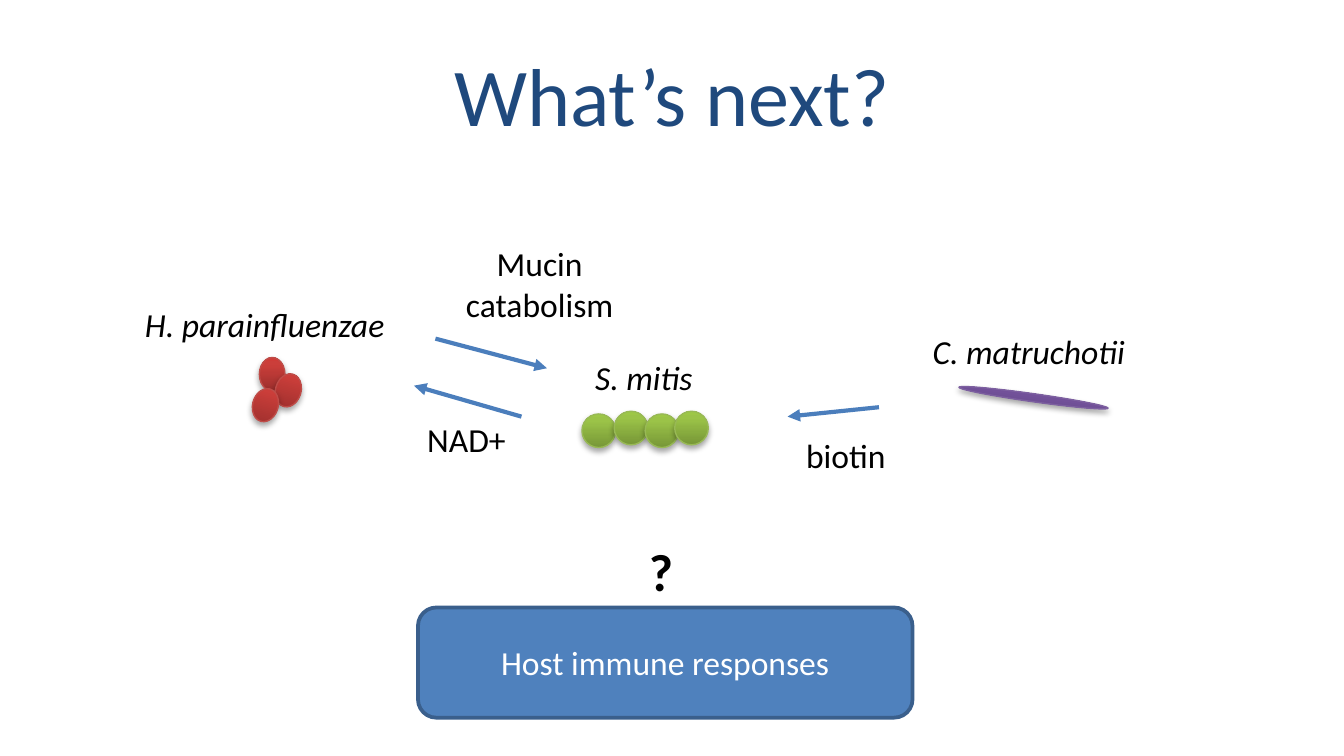
import copy

import pptx
import pptx.dml.color
import pptx.enum.shapes
import pptx.enum.text
import pptx.oxml
import pptx.oxml.ns
import pptx.util

Inches, Pt = pptx.util.Inches, pptx.util.Pt
SHAPE = pptx.enum.shapes.MSO_SHAPE
ALIGN = pptx.enum.text.PP_ALIGN
qn = pptx.oxml.ns.qn

SLIDE_SIZE = (10, 10 * 9 / 16)

# Gradient from bottom to top, then outline
GREEN = (("779737", "9BC348", "9DC746"), "98B955")
PURPLE = (("5F4480", "7B58A6", "7C57A8"), "7D60A0")
RED = (("9C2F2D", "CB3E3A", "CE3B37"), "BF4C48")
GRADIENT_POSITIONS = (0, 0.8, 1)

MITIS_CELLS = [((left, top, 0.25, 0.25), 0)
               for left, top in zip((4.33, 4.57, 4.8, 5.02), (3.08, 3.06) * 2)]
MATRUCHOTII_CELLS = [((7.13, 2.93, 1.12, 0.06), 8)]
PARAINFLUENZAE_CELLS = [
    ((1.93, 2.66, 0.19, 0.25), 0),
    ((2.05, 2.78, 0.19, 0.25), 15.8),
    ((1.88, 2.89, 0.19, 0.25), 15.8),
]

# Name, label box, alignment, cells, colours, whether label and cells are grouped
SPECIES = [
    ("S. mitis", (4.33, 2.61, 0.93, 0.4), ALIGN.LEFT, MITIS_CELLS, GREEN, True),
    ("C. matruchotii", (6.83, 2.41, 1.65, 0.4), ALIGN.CENTER,
     MATRUCHOTII_CELLS, PURPLE, False),
    ("H. parainfluenzae", (0.97, 2.21, 2, 0.4), ALIGN.CENTER,
     PARAINFLUENZAE_CELLS, RED, False),
]

# Label, label box, format, arrow start, arrow end
EXCHANGES = [
    ("biotin", (5.9, 3.19, 0.8, 0.4), {}, (6.54, 3.03), (5.86, 3.1)),
    ("NAD+", (3.08, 3.07, 0.79, 0.4), {}, (3.88, 3.1), (3.08, 2.87)),
    ("Mucin catabolism", (3.24, 1.76, 1.55, 0.71),
     {"align": ALIGN.CENTER, "wrap": True}, (3.24, 2.52), (4.07, 2.74)),
]


def rgb(color):
    return pptx.dml.color.RGBColor.from_string(color)


def inches(values):
    return [Inches(value) for value in values]


def write(frame, text, size=18, color="000000", bold=False, italic=False,
          align=ALIGN.LEFT):
    paragraph = frame.paragraphs[0]
    paragraph.alignment = align
    run = paragraph.add_run()
    run.text = text
    run.font.name = "Calibri"
    run.font.size = Pt(size)
    run.font.bold = bold
    run.font.italic = italic
    run.font.color.rgb = rgb(color)


def add_label(shapes, text, box, wrap=False, **style):
    frame = shapes.add_textbox(*inches(box)).text_frame
    frame.word_wrap = wrap
    frame.auto_size = pptx.enum.text.MSO_AUTO_SIZE.SHAPE_TO_FIT_TEXT
    write(frame, text, **style)


def outline(line, color, width):
    line.color.rgb = rgb(color)
    line.width = Pt(width)


def add_cell(shapes, box, rotation, colors):
    """Add one bacterium with a three-stop gradient and a soft shadow."""
    gradient, edge = colors
    cell = shapes.add_shape(SHAPE.OVAL, *inches(box))
    cell.rotation = rotation
    cell.fill.gradient()
    cell.fill.gradient_angle = 90
    stop_list = cell._element.spPr.find(".//" + qn("a:gsLst"))
    stop_list.append(copy.deepcopy(stop_list[-1]))
    for stop, position, color in zip(cell.fill.gradient_stops, GRADIENT_POSITIONS, gradient):
        stop.position = position
        stop.color.rgb = rgb(color)
    outline(cell.line, edge, 0.75)
    cell.shadow.inherit = False
    cell._element.spPr.find(qn("a:effectLst")).append(pptx.oxml.parse_xml(
        f'<a:outerShdw {pptx.oxml.ns.nsdecls("a")} blurRad="{Pt(3.1)}" dist="{Pt(1.8)}" '
        'dir="5400000" rotWithShape="0"><a:srgbClr val="000000">'
        '<a:alpha val="35000"/></a:srgbClr></a:outerShdw>'))


def add_arrow(shapes, start, end):
    arrow = shapes.add_connector(
        pptx.enum.shapes.MSO_CONNECTOR.STRAIGHT, *inches(start + end))
    outline(arrow.line, "4B7EBC", 2.25)
    line = arrow.line._get_or_add_ln()
    line.append(line.makeelement(qn("a:tailEnd"), {"type": "triangle"}))
    properties = arrow._element.spPr
    properties.append(properties.makeelement(qn("a:effectLst"), {}))


def main():
    deck = pptx.Presentation()
    deck.slide_width, deck.slide_height = inches(SLIDE_SIZE)
    slide = deck.slides.add_slide(deck.slide_layouts[5])
    shapes = slide.shapes

    title = shapes.title
    title.left, title.top, title.width, title.height = inches((0.5, 0.23, 9, 0.94))
    title.text_frame.vertical_anchor = pptx.enum.text.MSO_ANCHOR.MIDDLE
    write(title.text_frame, "What’s next?", size=44, color="1F497D", align=ALIGN.CENTER)

    for name, box, align, cells, colors, grouped in SPECIES:
        members = shapes.add_group_shape().shapes if grouped else shapes
        for cell_box, rotation in cells:
            add_cell(members, cell_box, rotation, colors)
        add_label(members, name, box, italic=True, align=align)

    for name, box, style, start, end in EXCHANGES:
        add_arrow(shapes, start, end)
        add_label(shapes, name, box, **style)

    host = shapes.add_shape(SHAPE.ROUNDED_RECTANGLE, *inches((3.11, 4.52, 3.68, 0.82)))
    host.shadow.inherit = False
    host.fill.solid()
    host.fill.fore_color.rgb = rgb("4F81BD")
    outline(host.line, "3A5F8C", 2)
    host.text_frame.vertical_anchor = pptx.enum.text.MSO_ANCHOR.MIDDLE
    write(host.text_frame, "Host immune responses", color="FFFFFF", align=ALIGN.CENTER)
    add_label(shapes, "?", (4.73, 3.96, 0.38, 0.57), size=28, bold=True)

    deck.save("out.pptx")


if __name__ == "__main__":
    main()
